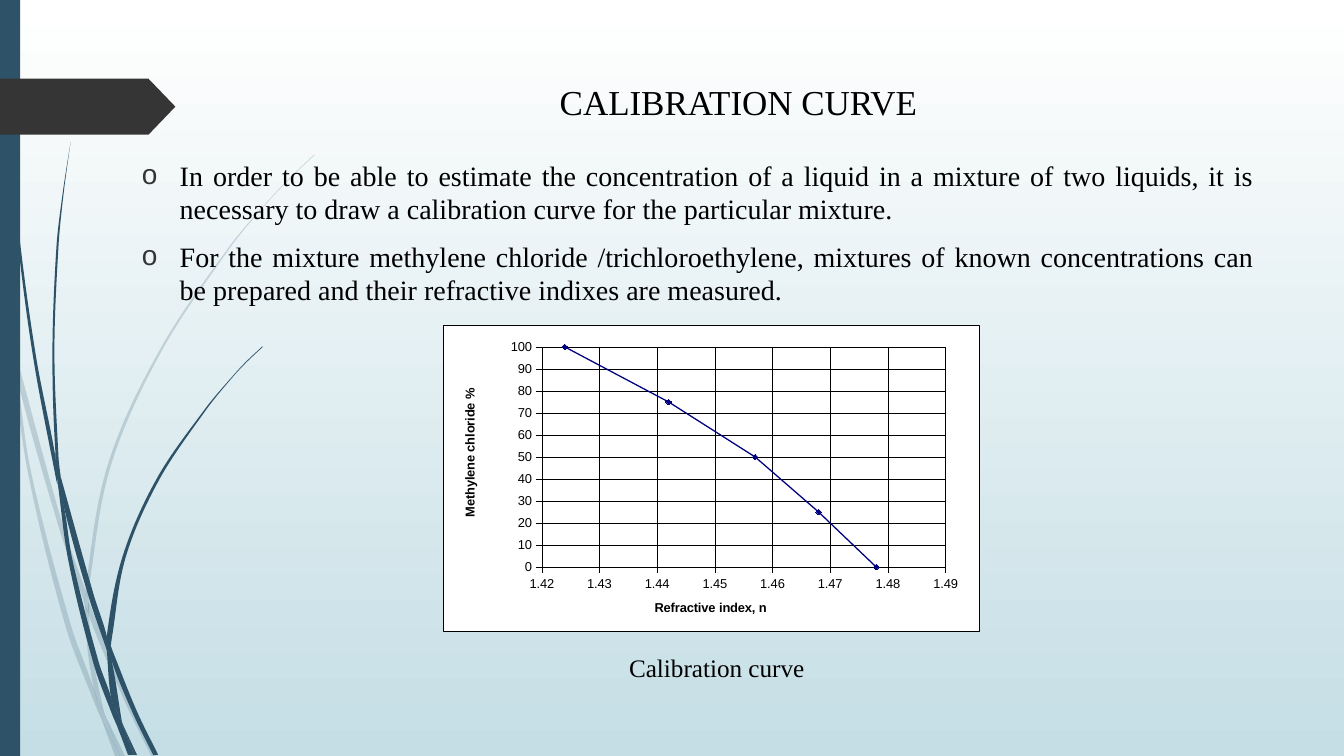
from lxml.etree import SubElement
from pptx import Presentation
from pptx.chart.data import XyChartData
from pptx.dml.color import RGBColor
from pptx.enum.chart import XL_CHART_TYPE, XL_MARKER_STYLE, XL_TICK_MARK
from pptx.enum.shapes import MSO_SHAPE
from pptx.enum.text import MSO_ANCHOR, PP_ALIGN
from pptx.oxml import parse_xml
from pptx.oxml.ns import nsdecls, qn
from pptx.util import Pt

HUNDREDTH_INCH = 0.72
PALE_BLADES = [
    ([(0, 299), (10, 344), (11, 350)], [(0, 282), (9, 322), (11, 350)]),
    ([(14, 345), (17, 376), (58, 522), (84, 599)], [(14, 345), (62, 520), (85, 586)]),
    ([(88, 596), (88, 610), (123, 694), (150, 750)], [(88, 596), (92, 607), (127, 692), (155, 750)]),
    ([(105, 711), (119, 750)], [(105, 711), (124, 750)]),
    ([(11, 350), (28, 470), (65, 621), (92, 693), (101, 714)],
     [(11, 350), (17, 376), (31, 469), (70, 619), (93, 683), (99, 707), (101, 714)]),
    ([(84, 599), (87, 646), (93, 683), (96, 692), (105, 711)],
     [(84, 599), (88, 610), (91, 646), (103, 706), (105, 711)]),
    ([(312, 153), (289, 175), (268, 197), (228, 244), (158, 348), (107, 461), (85, 584), (88, 596)],
     [(312, 154), (290, 175), (268, 198), (229, 245), (160, 349), (110, 462), (88, 584), (88, 596)]),
    ([(101, 714), (114, 750)], [(101, 714), (119, 750)]),
    ([(85, 586), (84, 599), (88, 610)], [(85, 586), (88, 596), (88, 610)]),
    ([(93, 683), (99, 707), (101, 714), (119, 750)], [(93, 683), (96, 692), (105, 711), (119, 750)]),
]
DARK_BLADES = [
    ([(3, 0), (4, 48), (7, 110), (17, 233), (33, 355), (56, 477), (57, 481)],
     [(4, 0), (5, 48), (8, 109), (19, 232), (36, 355), (55, 453), (57, 481)]),
    ([(60, 472), (64, 505), (88, 592), (106, 645)], [(60, 472), (93, 590), (106, 631), (106, 645)]),
    ([(110, 641), (111, 656), (132, 708), (152, 749)], [(110, 641), (113, 649), (136, 706), (157, 749)]),
    ([(57, 477), (68, 557), (93, 659), (111, 708), (117, 722)],
     [(57, 477), (64, 505), (72, 556), (98, 657), (110, 691), (117, 722)]),
    ([(70, 141), (62, 193), (56, 245), (52, 349), (55, 449), (60, 472)],
     [(70, 141), (63, 193), (58, 245), (54, 349), (58, 453), (60, 472)]),
    ([(122, 719), (133, 749)], [(122, 719), (136, 749)]),
    ([(55, 449), (55, 453), (57, 477), (64, 505)], [(55, 449), (60, 472), (64, 505)]),
    ([(260, 344), (245, 358), (231, 373), (204, 405), (156, 474), (122, 551), (106, 631), (110, 641)],
     [(261, 344), (245, 359), (231, 374), (205, 406), (158, 476), (125, 552), (111, 633), (110, 641)]),
    ([(117, 722), (127, 749)], [(117, 722), (131, 749)]),
    ([(106, 645), (110, 691), (116, 706), (122, 719)], [(106, 645), (111, 656), (121, 716), (122, 719)]),
    ([(106, 631), (106, 645), (111, 656)], [(106, 631), (110, 641), (111, 656)]),
    ([(110, 691), (117, 722), (130, 749)], [(110, 691), (116, 706), (122, 719), (133, 749)]),
]


def color(value):
    return RGBColor.from_string(value)


def curve_edge(points):
    last = len(points) - 1
    slopes = []
    for index in range(last + 1):
        (x0, y0), (x1, y1) = points[max(index - 1, 0)], points[min(index + 1, last)]
        slopes.append((x1 - x0) / (y1 - y0))
    edge = [points[0]]
    for index in range(last):
        (x0, y0), (x1, y1) = points[index:index + 2]
        third = (y1 - y0) / 3
        edge += [(x0 + third * slopes[index], y0 + third),
                 (x1 - third * slopes[index + 1], y1 - third), (x1, y1)]
    return edge


class SlideBuilder:
    """Holds the slide style and draws each kind of element."""

    accent, dark, ink, line = "2E5369", "353535", "000000", "000080"
    text_font, chart_font, chart_size = "Times New Roman", "Arial", 9.2

    def __init__(self, slide):
        self.slide = slide

    def background(self, top, bottom):
        fill = self.slide.background.fill
        fill.gradient()
        fill.gradient_angle = 270
        for stop, value, position in zip(fill.gradient_stops, (top, bottom), (0, 1)):
            stop.color.rgb = color(value)
            stop.position = position

    def paint(self, shape, value, opacity=100):
        shape.shadow.inherit = False
        shape.fill.solid()
        shape.fill.fore_color.rgb = color(value)
        shape.line.fill.background()
        if opacity < 100:
            tint = shape.fill._xPr.find(".//" + qn("a:srgbClr"))
            SubElement(tint, qn("a:alpha"), val=str(opacity * 1000))

    def block(self, preset, left, top, width, height, value):
        shape = self.slide.shapes.add_shape(preset, Pt(left), Pt(top), Pt(width), Pt(height))
        self.paint(shape, value)
        return shape

    def blade(self, left_edge, right_edge, opacity):
        outline = curve_edge(left_edge) + [right_edge[-1]] * 2 + curve_edge(right_edge)[::-1]
        points = [(Pt(x * HUNDREDTH_INCH), Pt(y * HUNDREDTH_INCH)) for x, y in outline]
        builder = self.slide.shapes.build_freeform(*points[0])
        builder.add_line_segments(points[1:], close=True)
        shape = builder.convert_to_shape()
        segments = list(shape._element.iter(qn("a:lnTo")))
        for first, second, third in zip(*[iter(segments)] * 3):
            first.tag = qn("a:cubicBezTo")
            for segment in (second, third):
                first.append(segment[0])
                segment.getparent().remove(segment)
        self.paint(shape, self.accent, opacity)

    def text(self, left, top, width, height, lines, size, align, bullet=None, anchor=MSO_ANCHOR.TOP):
        box = self.slide.shapes.add_textbox(Pt(left), Pt(top), Pt(width), Pt(height))
        frame = box.text_frame
        frame.word_wrap = True
        frame.vertical_anchor = anchor
        for index, line in enumerate(lines):
            paragraph = frame.add_paragraph() if index else frame.paragraphs[0]
            paragraph.alignment = align
            if index:
                paragraph.space_before = Pt(10)
            if bullet:
                self.bullet(paragraph, bullet)
            run = paragraph.add_run()
            run.text = line
            run.font.name = self.text_font
            run.font.size = Pt(size)
            run.font.color.rgb = color(self.ink)

    def bullet(self, paragraph, character):
        properties = paragraph._p.get_or_add_pPr()
        properties.set("marL", str(Pt(27)))
        properties.set("indent", str(Pt(-27)))
        tint = SubElement(properties, qn("a:buClr"))
        SubElement(tint, qn("a:srgbClr"), val=self.dark)
        SubElement(properties, qn("a:buFont"), typeface=self.chart_font)
        SubElement(properties, qn("a:buChar"), char=character)

    def layout(self, **values):
        items = "".join(f'<c:{name} val="{value}"/>' for name, value in values.items())
        return parse_xml(f'<c:layout {nsdecls("c")}><c:manualLayout>{items}</c:manualLayout></c:layout>')

    def axis(self, axis, title, low, high, unit, number_format, title_x, title_y):
        axis.minimum_scale, axis.maximum_scale, axis.major_unit = low, high, unit
        axis.major_tick_mark = XL_TICK_MARK.OUTSIDE
        axis.minor_tick_mark = XL_TICK_MARK.NONE
        axis.has_major_gridlines = True
        for line in (axis.format.line, axis.major_gridlines.format.line):
            line.color.rgb = color(self.ink)
            line.width = Pt(0.23)
        axis.tick_labels.number_format = number_format
        axis.tick_labels.number_format_is_linked = False
        self.chart_text(axis.tick_labels.font)
        run = axis.axis_title.text_frame.paragraphs[0].add_run()
        run.text = title
        self.chart_text(run.font, bold=True)
        element = axis.axis_title._element
        for old in element.findall(qn("c:layout")):
            element.remove(old)
        element.find(qn("c:tx")).addnext(self.layout(xMode="edge", yMode="edge", x=title_x, y=title_y))

    def chart_text(self, font, bold=False):
        font.name, font.size, font.bold = self.chart_font, Pt(self.chart_size), bold
        font.color.rgb = color(self.ink)

    def scatter(self, left, top, width, height, points):
        data = XyChartData()
        readings = data.add_series("Series 1")
        for index, percent in points:
            readings.add_data_point(index, percent)
        chart = self.slide.shapes.add_chart(
            XL_CHART_TYPE.XY_SCATTER_LINES, Pt(left), Pt(top), Pt(width), Pt(height), data).chart
        chart.has_legend = chart.has_title = False
        self.chart_text(chart.font)
        self.axis(chart.category_axis, "Refractive index, n", 1.42, 1.49, 0.01, "0.00", 0.39, 0.89)
        self.axis(chart.value_axis, "Methylene chloride %", 0, 100, 10, "0", 0.03, 0.2)
        chart.plots[0].vary_by_categories = False
        series = chart.plots[0].series[0]
        series.smooth = False
        series.format.line.color.rgb = color(self.line)
        series.format.line.width = Pt(0.92)
        marker = series.marker
        marker.style, marker.size = XL_MARKER_STYLE.DIAMOND, 4
        marker.format.fill.solid()
        marker.format.fill.fore_color.rgb = color(self.line)
        marker.format.line.color.rgb = color(self.line)
        root = chart._chartSpace
        area = root.find(".//" + qn("c:plotArea"))
        for old in area.findall(qn("c:layout")):
            area.remove(old)
        area.insert(0, self.layout(layoutTarget="inner", xMode="edge", yMode="edge",
                                   x=0.184, y=0.072, w=0.753, h=0.719))
        root.find(qn("c:chart")).addnext(parse_xml(
            f'<c:spPr {nsdecls("c", "a")}><a:solidFill><a:srgbClr val="FFFFFF"/></a:solidFill>'
            f'<a:ln w="{Pt(0.23)}"><a:solidFill><a:srgbClr val="{self.ink}"/></a:solidFill></a:ln></c:spPr>'))


def main():
    presentation = Presentation()
    presentation.slide_width, presentation.slide_height = Pt(960), Pt(540)
    builder = SlideBuilder(presentation.slides.add_slide(presentation.slide_layouts[6]))
    builder.background("FFFFFF", "C5DEE5")
    for blades, opacity in ((PALE_BLADES, 20), (DARK_BLADES, 100)):
        for left_edge, right_edge in blades:
            builder.blade(left_edge, right_edge, opacity)
    builder.block(MSO_SHAPE.RECTANGLE, 0, 0, 14.4, 540, builder.accent)
    tag = builder.block(MSO_SHAPE.PENTAGON, 0, 56.2, 125.3, 40, builder.dark)
    tag.adjustments[0] = 0.48
    builder.text(176.4, 53.5, 702, 38.2, ["CALIBRATION CURVE"], 25, PP_ALIGN.CENTER, anchor=MSO_ANCHOR.MIDDLE)
    builder.text(389.5, 462.2, 245, 29, ["Calibration curve"], 18, PP_ALIGN.CENTER)
    builder.text(94.3, 109.4, 808.6, 350.6, [
        "In order to be able to estimate the concentration of a liquid in a mixture of two "
        "liquids, it is necessary to draw a calibration curve for the particular mixture.",
        "For the mixture methylene chloride /trichloroethylene, mixtures of known "
        "concentrations can be prepared and their refractive indixes are measured.",
    ], 20, PP_ALIGN.JUSTIFY, bullet="o")
    builder.scatter(316.4, 232, 383.3, 219, [
        (1.478, 0), (1.468, 25), (1.457, 50), (1.442, 75), (1.424, 100)])
    presentation.save("out.pptx")


if __name__ == "__main__":
    main()
